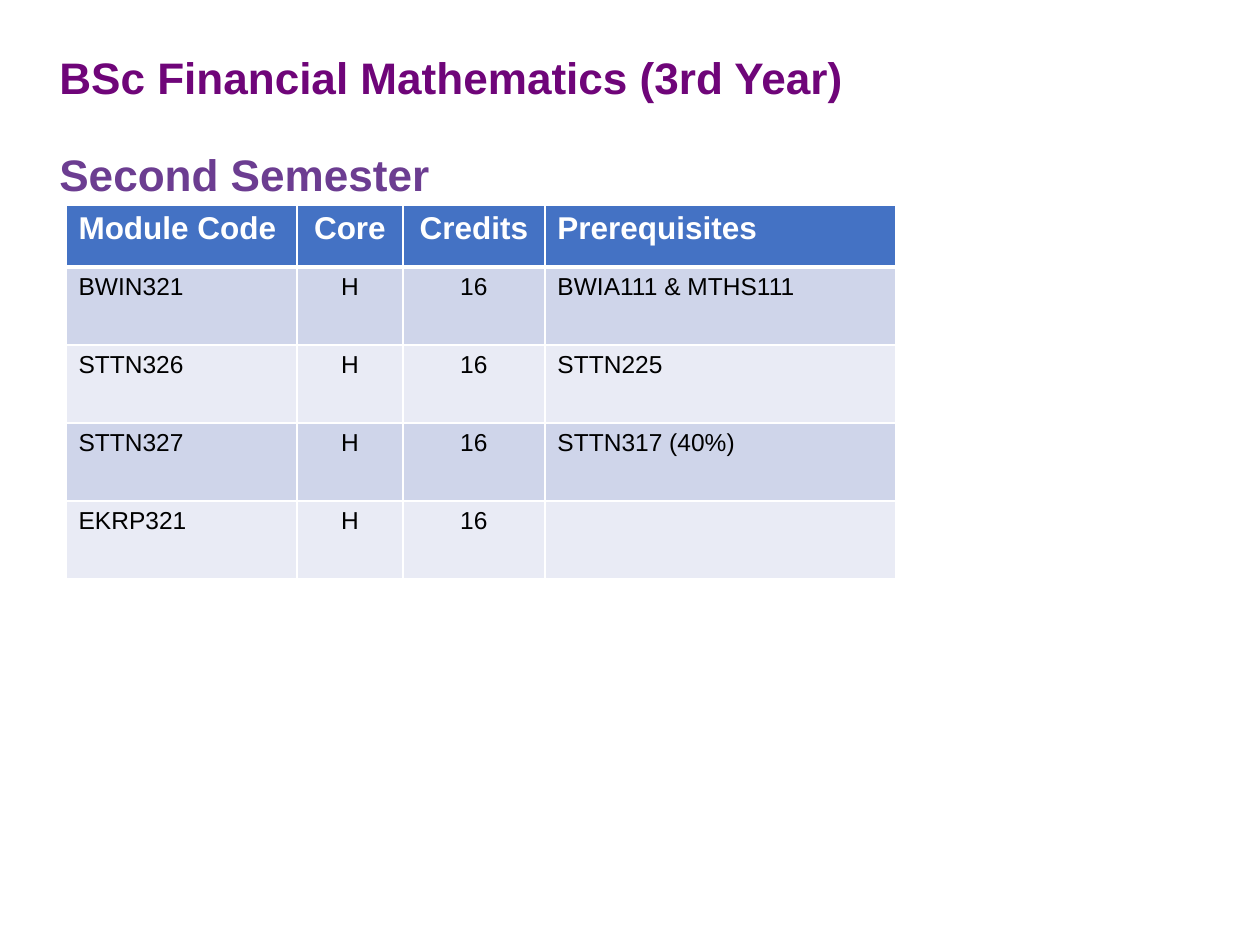
import pptx
import pptx.dml.color
import pptx.enum.text
import pptx.oxml
import pptx.oxml.ns
import pptx.util

SCALE = 914400 // 126
ALIGN = pptx.enum.text.PP_ALIGN
HEAD = {"size": pptx.util.Pt(18), "bold": True}
BODY = {"size": pptx.util.Pt(14), "bold": False}
TITLE = {"size": pptx.util.Pt(25.2), "bold": True}
LINES = [("BSc Financial Mathematics (3rd Year)", "6F0579", 0),
         ("Second Semester", "6C3D91", 28.2)]
COLS = [(231, ALIGN.LEFT), (106, ALIGN.CENTER),
        (142, ALIGN.CENTER), (351, ALIGN.LEFT)]
ROWS = [
    ("Module Code", "Core", "Credits", "Prerequisites"),
    ("BWIN321", "H", "16", "BWIA111 & MTHS111"),
    ("STTN326", "H", "16", "STTN225"),
    ("STTN327", "H", "16", "STTN317 (40%)"),
    ("EKRP321", "H", "16", ""),
]


def px(num):
    """Turn whole px into EMU."""
    return pptx.util.Emu(num * SCALE)


def tint(code):
    """Turn a hex string into a colour."""
    return pptx.dml.color.RGBColor.from_string(code)


def style(font, code, form):
    """Set a font's colour and format values."""
    font.name = "Arial"
    font.color.rgb = tint(code)
    for key, value in form.items():
        setattr(font, key, value)


def edge(cell, side, width):
    """Draw one white cell border, its width in points."""
    space = pptx.oxml.ns.nsdecls("a")
    line = pptx.oxml.parse_xml(
        f'<a:{side} {space} w="{width * 12700}"><a:solidFill>'
        f'<a:srgbClr val="FFFFFF"/></a:solidFill></a:{side}>')
    cell._tc.get_or_add_tcPr().append(line)


def title(slide, left, top, width, height):
    """Place the two title lines in the given box."""
    box = slide.shapes.add_textbox(px(left), px(top), px(width), px(height))
    frame = box.text_frame
    frame.word_wrap = True
    for i, (text, code, gap) in enumerate(LINES):
        para = frame.add_paragraph() if i else frame.paragraphs[0]
        para.text = text
        para.line_spacing = 0.9
        para.space_before = pptx.util.Pt(gap)
        style(para.font, code, TITLE)


def grid(slide, left, top, width, height, head):
    """Place the module table, with a head row and equal body rows."""
    table = slide.shapes.add_table(
        len(ROWS), len(COLS), px(left), px(top), px(width), px(height)).table
    for col, (wide, _) in zip(table.columns, COLS):
        col.width = px(wide)
    tall = (height - head) // (len(ROWS) - 1)
    for r, texts in enumerate(ROWS):
        table.rows[r].height = px(tall if r else head)
        fill = ("E9EBF5" if r % 2 == 0 else "CFD5EA") if r else "4472C4"
        for c, text in enumerate(texts):
            cell = table.cell(r, c)
            for side in ("lnL", "lnR", "lnT", "lnB"):
                thick = (r, side) in ((0, "lnB"), (1, "lnT"))
                edge(cell, side, 3 if thick else 1)
            cell.fill.solid()
            cell.fill.fore_color.rgb = tint(fill)
            para = cell.text_frame.paragraphs[0]
            para.text = text
            para.alignment = COLS[c][1]
            style(para.font, "000000" if r else "FFFFFF", BODY if r else HEAD)


def main():
    """Build and save the slide."""
    deck = pptx.Presentation()
    deck.slide_width, deck.slide_height = px(1260), px(945)
    slide = deck.slides.add_slide(deck.slide_layouts[6])
    title(slide, 47, 50, 1166, 150)
    grid(slide, 66, 205, 830, 374, 62)
    deck.save("out.pptx")


if __name__ == "__main__":
    main()
